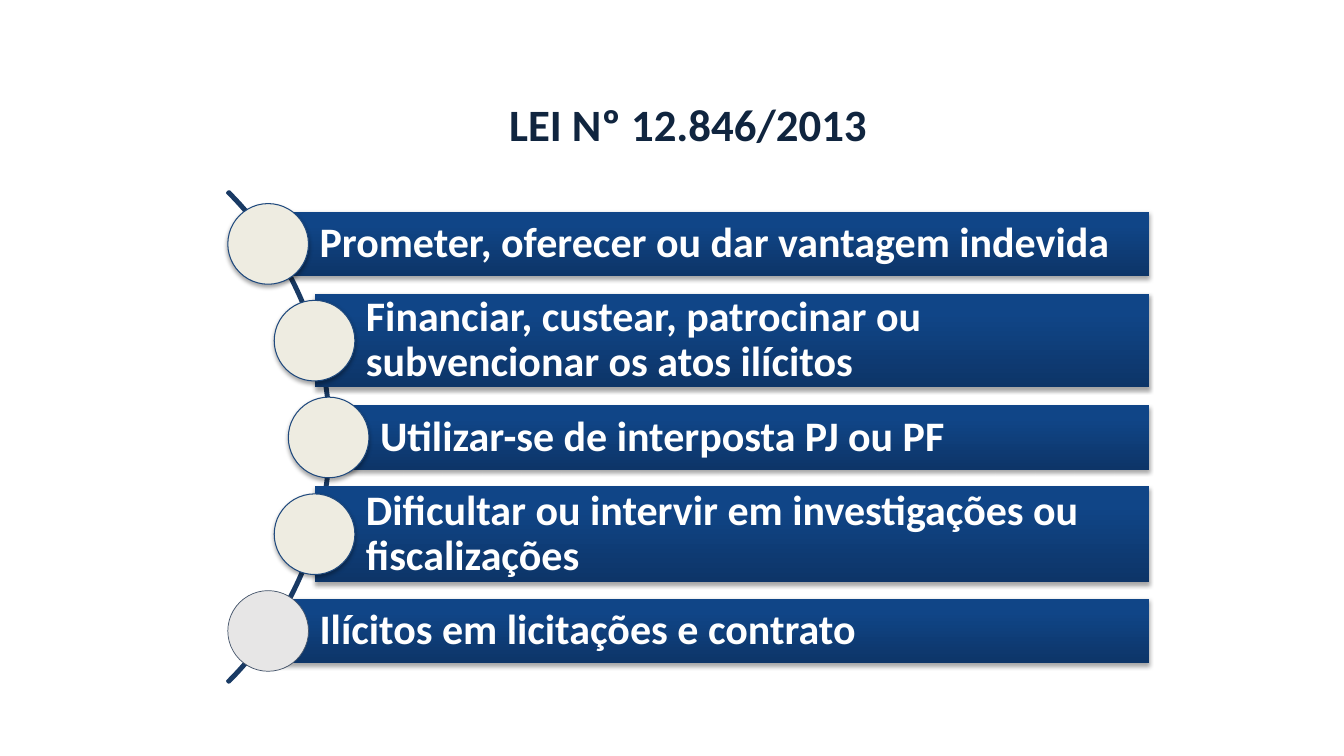
"""Build the slide listing five offences under Law 12.846/2013."""
from copy import deepcopy

from lxml.etree import SubElement
from pptx import Presentation
from pptx.dml.color import RGBColor
from pptx.enum.shapes import MSO_SHAPE
from pptx.enum.text import MSO_ANCHOR, MSO_AUTO_SIZE, PP_ALIGN
from pptx.oxml.ns import qn
from pptx.util import Inches, Pt

NAVY = RGBColor(0x10, 0x25, 0x3F)
ARC = RGBColor(0x19, 0x3A, 0x64)
WHITE = RGBColor(0xFF, 0xFF, 0xFF)
CREAM = RGBColor(0xEE, 0xEC, 0xE1)
GREY = RGBColor(0xE7, 0xE6, 0xE6)
BLUE = RGBColor(0x1F, 0x49, 0x7D)
SLATE = RGBColor(0x44, 0x54, 0x6A)
SHADES = [
    (0, RGBColor(0x0D, 0x35, 0x68)),
    (0.8, RGBColor(0x10, 0x45, 0x87)),
    (1, RGBColor(0x0E, 0x45, 0x8A)),
]
ITEMS = [
    ("Prometer, oferecer ou dar vantagem indevida", 2.66, 0.64),
    ("Financiar, custear, patrocinar ou subvencionar os atos ilícitos", 3.12, 0.93),
    ("Utilizar-se de interposta PJ ou PF", 3.26, 0.64),
    ("Dificultar ou intervir em investigações ou fiscalizações", 3.12, 0.95),
    ("Ilícitos em licitações e contrato", 2.66, 0.64),
]
RIGHT, FIRST, STEP, SIZE = 11.4, 2.42, 0.96, 0.8


def add_run(para, text, size, color):
    run = para.add_run()
    run.text = text
    run.font.name = "Calibri"
    run.font.size = Pt(size)
    run.font.bold = True
    run.font.color.rgb = color


def add_shadow(shape):
    shape.shadow.inherit = False
    effects = shape._element.spPr.find(qn("a:effectLst"))
    outer = SubElement(effects, qn("a:outerShdw"), blurRad="40000", dist="23000",
                       dir="5400000", rotWithShape="0")
    tint = SubElement(outer, qn("a:srgbClr"), val="000000")
    SubElement(tint, qn("a:alpha"), val="35000")


deck = Presentation()
deck.slide_width, deck.slide_height = Inches(13.33), Inches(7.5)
slide = deck.slides.add_slide(deck.slide_layouts[5])
shapes = slide.shapes

title = shapes.title
title.left, title.top = Inches(2.65), Inches(0.91)
title.width, title.height = Inches(8.35), Inches(0.63)
frame = title.text_frame
frame.auto_size = MSO_AUTO_SIZE.NONE
frame.vertical_anchor = MSO_ANCHOR.MIDDLE
frame.paragraphs[0].alignment = PP_ALIGN.CENTER
add_run(frame.paragraphs[0], "LEI Nº 12.846/2013", 32, NAVY)

arc = shapes.add_shape(MSO_SHAPE.BLOCK_ARC, Inches(-3.61), Inches(0.89),
                       Inches(6.89), Inches(6.89))
for index, value in enumerate((189, 27, 0.003)):
    arc.adjustments[index] = value
arc.shadow.inherit = False
arc.fill.background()
arc.line.color.rgb = ARC
arc.line.width = Pt(2)

for index, (text, left, height) in enumerate(ITEMS):
    middle = FIRST + index * STEP
    bar = shapes.add_shape(MSO_SHAPE.RECTANGLE, Inches(left), Inches(middle - height / 2),
                           Inches(RIGHT - left), Inches(height))
    bar.fill.gradient()
    bar.fill.gradient_angle = 90
    stops = bar._element.spPr.find(qn("a:gradFill")).find(qn("a:gsLst"))
    stops.append(deepcopy(stops[1]))
    for stop, (place, color) in zip(bar.fill.gradient_stops, SHADES):
        stop.position = place
        stop.color.rgb = color
    bar.line.fill.background()
    add_shadow(bar)

    frame = bar.text_frame
    frame.word_wrap = True
    frame.vertical_anchor = MSO_ANCHOR.MIDDLE
    frame.margin_left = Inches(0.51)
    frame.margin_top = frame.margin_right = frame.margin_bottom = Inches(0.08)
    para = frame.paragraphs[0]
    para.alignment = PP_ALIGN.LEFT
    para.line_spacing = 0.9
    add_run(para, text, 30, WHITE)

    last = index == len(ITEMS) - 1
    dot = shapes.add_shape(MSO_SHAPE.OVAL, Inches(left - SIZE / 2), Inches(middle - SIZE / 2),
                           Inches(SIZE), Inches(SIZE))
    dot.fill.solid()
    dot.fill.fore_color.rgb = GREY if last else CREAM
    dot.line.color.rgb = SLATE if last else BLUE
    dot.line.width = Pt(0.5 if last else 0.75)
    if last:
        dot.shadow.inherit = False
    else:
        add_shadow(dot)

deck.save("out.pptx")
